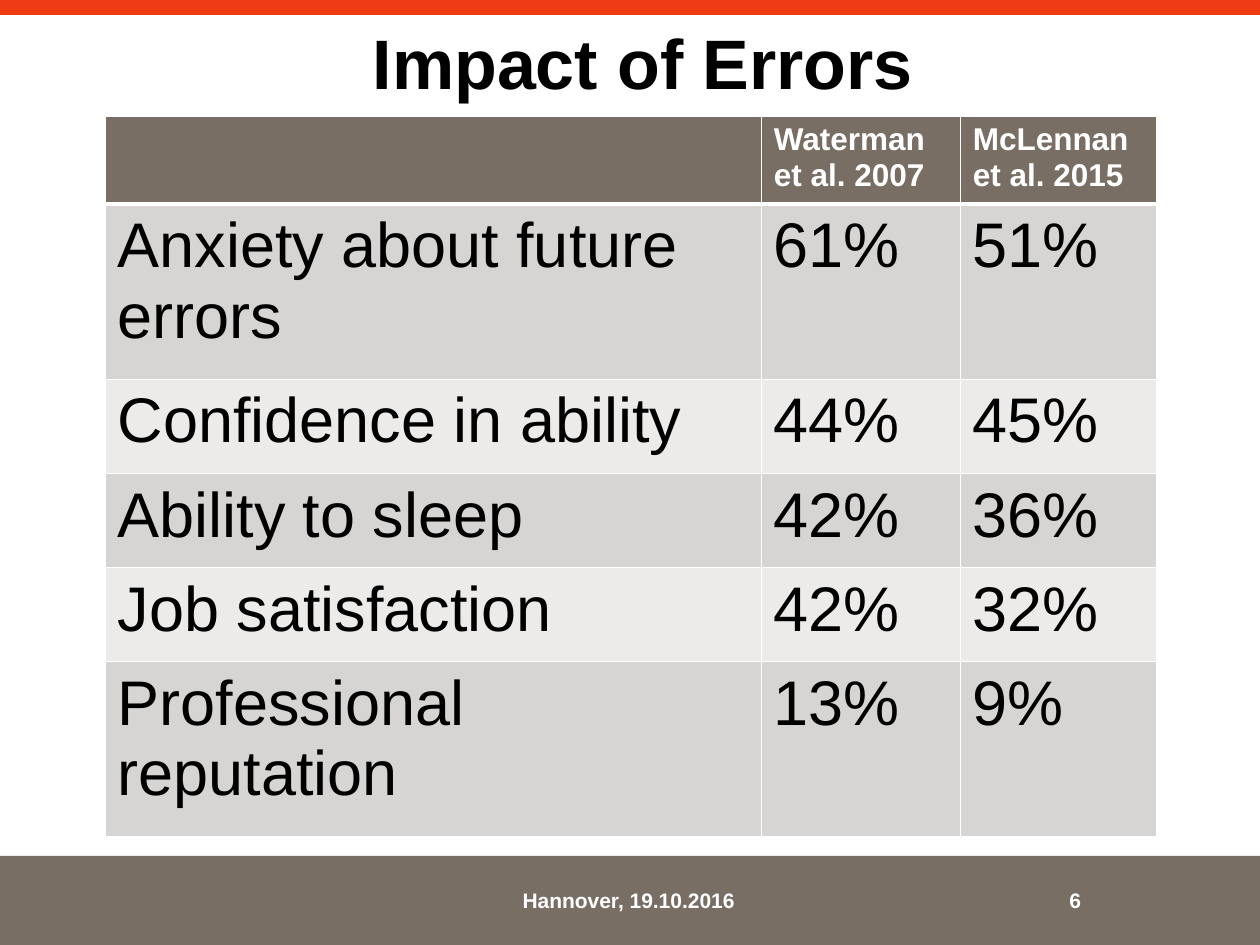
from typing import NamedTuple

from lxml.etree import SubElement
from pptx import Presentation
from pptx.dml.color import RGBColor
from pptx.enum.shapes import MSO_SHAPE
from pptx.enum.text import MSO_ANCHOR
from pptx.oxml.ns import qn
from pptx.util import Pt

WHITE = RGBColor(0xFF, 0xFF, 0xFF)
BLACK = RGBColor(0x00, 0x00, 0x00)
TAUPE = RGBColor(0x78, 0x6E, 0x64)
ORANGE = RGBColor(0xF0, 0x3C, 0x14)
BAND_DARK = RGBColor(0xD6, 0xD5, 0xD3)
BAND_LIGHT = RGBColor(0xEC, 0xEB, 0xEA)
FONT = "Arial"


class Bar(NamedTuple):
    top: float
    height: float
    color: RGBColor


class Label(NamedTuple):
    text: str
    left: float
    top: float
    width: float
    height: float
    size: float
    color: RGBColor
    inset_x: float
    inset_y: float


class Impact(NamedTuple):
    effect: str
    waterman: str
    mclennan: str
    height: float


BARS = [Bar(489, 51, TAUPE), Bar(0, 8.5, ORANGE)]
LABELS = [
    Label("6", 604, 503.5, 39, 21.8, 12, WHITE, 7.2, 3.6),
    Label("Hannover, 19.10.2016", 291.5, 503.5, 137, 21.8, 12, WHITE, 7.2, 3.6),
    Label("Impact of Errors", 207, 9.5, 335, 51, 40, BLACK, 6, 3),
]
COLUMN_WIDTHS = [375, 113.75, 112.25]
IMPACTS = [
    Impact("", "Waterman et al. 2007", "McLennan et al. 2015", 49),
    Impact("Anxiety about future errors", "61%", "51%", 100.25),
    Impact("Confidence in ability", "44%", "45%", 53.75),
    Impact("Ability to sleep", "42%", "36%", 53.75),
    Impact("Job satisfaction", "42%", "32%", 53.75),
    Impact("Professional reputation", "13%", "9%", 100.25),
]


def add_text(frame, text: str, size: float, color: RGBColor, bold: bool) -> None:
    run = frame.paragraphs[0].add_run()
    run.text = text
    run.font.name = FONT
    run.font.size = Pt(size)
    run.font.bold = bold
    run.font.color.rgb = color


def draw_bar(slide, bar: Bar, width: int) -> None:
    shape = slide.shapes.add_shape(
        MSO_SHAPE.RECTANGLE, 0, Pt(bar.top), width, Pt(bar.height))
    shape.shadow.inherit = False
    shape.fill.solid()
    shape.fill.fore_color.rgb = bar.color
    shape.line.fill.background()


def draw_label(slide, label: Label) -> None:
    box = slide.shapes.add_textbox(
        Pt(label.left), Pt(label.top), Pt(label.width), Pt(label.height))
    frame = box.text_frame
    frame.word_wrap = True
    frame.vertical_anchor = MSO_ANCHOR.MIDDLE
    frame.margin_left = Pt(label.inset_x)
    frame.margin_right = 0
    frame.margin_top = frame.margin_bottom = Pt(label.inset_y)
    add_text(frame, label.text, label.size, label.color, bold=True)


def add_borders(cell, widths: dict[str, float]) -> None:
    """Add white borders; call before filling, as the schema puts lines first."""
    properties = cell._tc.get_or_add_tcPr()
    for side in ("lnL", "lnR", "lnT", "lnB"):
        line = SubElement(properties, qn(f"a:{side}"), w=str(Pt(widths.get(side, 1))))
        fill = SubElement(line, qn("a:solidFill"))
        SubElement(fill, qn("a:srgbClr"), val=str(WHITE))


def draw_table(slide, left: float, top: float) -> None:
    table = slide.shapes.add_table(
        len(IMPACTS), len(COLUMN_WIDTHS), Pt(left), Pt(top),
        Pt(sum(COLUMN_WIDTHS)), Pt(sum(impact.height for impact in IMPACTS))).table
    for column, width in zip(table.columns, COLUMN_WIDTHS):
        column.width = Pt(width)
    for index, (row, impact) in enumerate(zip(table.rows, IMPACTS)):
        row.height = Pt(impact.height)
        header = index == 0
        band = BAND_DARK if index % 2 else BAND_LIGHT
        heavy_side = {0: {"lnB": 3}, 1: {"lnT": 3}}.get(index, {})
        for cell, text in zip(row.cells, impact[:3]):
            add_borders(cell, heavy_side)
            cell.fill.solid()
            cell.fill.fore_color.rgb = TAUPE if header else band
            if text:
                add_text(cell.text_frame, text, 18 if header else 36,
                         WHITE if header else BLACK, bold=header)


def main() -> None:
    presentation = Presentation()
    presentation.slide_width = Pt(720)
    presentation.slide_height = Pt(540)
    slide = presentation.slides.add_slide(presentation.slide_layouts[6])
    for bar in BARS:
        draw_bar(slide, bar, presentation.slide_width)
    for label in LABELS:
        draw_label(slide, label)
    draw_table(slide, 60, 66.25)
    presentation.save("out.pptx")


if __name__ == "__main__":
    main()
